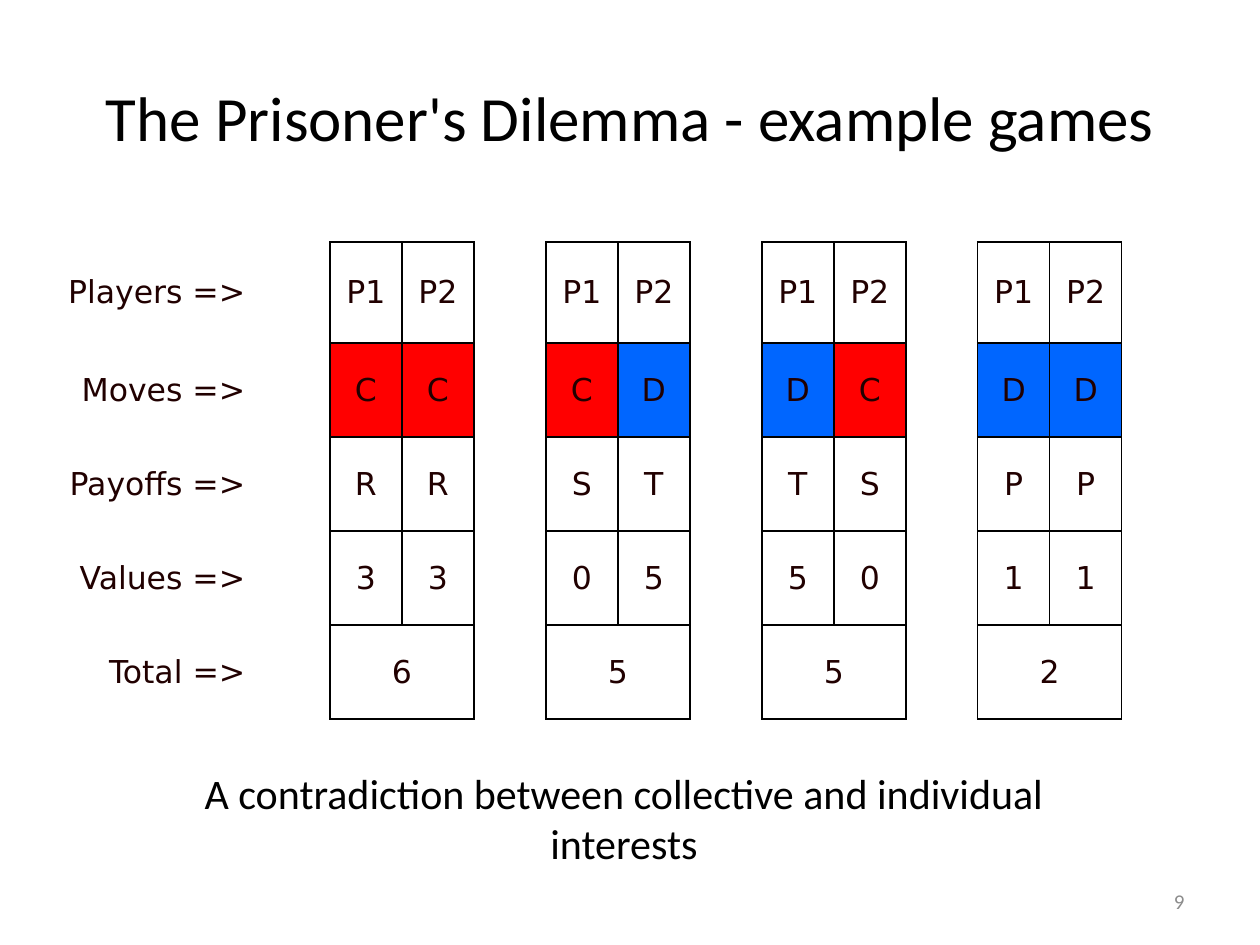
from lxml import etree
from pptx import Presentation
from pptx import util as u
from pptx.dml.color import RGBColor
from pptx.enum import text
from pptx.oxml import ns

SCALE = 914400 / 126
INK, TABLE_INK = "000000", "210000"
FILLS = {"C": "FF0000", "D": "0066FF"}
LABELS = ["Players =>", "Moves =>", "Payoffs =>", "Values =>", "Total =>"]
# Each game: moves, payoffs, values, total
GAMES = [("CC", "RR", "33", "6"), ("CD", "ST", "05", "5"),
         ("DC", "TS", "50", "5"), ("DD", "PP", "11", "2")]
NO_STYLE = "{2D5ABB26-0587-4C30-8999-92F81FD0307C}"
MID, RIGHT = text.PP_ALIGN.CENTER, text.PP_ALIGN.RIGHT


def px(n):
    return u.Emu(round(n * SCALE))


def tint(code):
    return RGBColor.from_string(code)


class Deck:
    font = "Calibri"
    grid_font = "DejaVu Sans"

    def __init__(self):
        self.prs = Presentation()
        self.prs.slide_width, self.prs.slide_height = px(1260), px(945)
        self.slide = self.prs.slides.add_slide(self.prs.slide_layouts[5])

    def put(self, frame, words, size, align, color=INK, font=None):
        para = frame.paragraphs[0]
        para.text = words
        para.alignment = align
        face = para.runs[0].font
        face.name, face.size = font or self.font, u.Pt(size)
        face.color.rgb = tint(color)
        return para

    def title(self, words, x, y, w, h):
        shape = self.slide.shapes.title
        shape.left, shape.top, shape.width, shape.height = map(px, (x, y, w, h))
        frame = shape.text_frame
        frame.margin_left = frame.margin_right = 0
        frame.margin_top = frame.margin_bottom = 0
        frame.vertical_anchor = text.MSO_ANCHOR.MIDDLE
        self.put(frame, words, 36, MID)

    def label(self, words, x, y, w, h, size, align, color=INK,
              anchor=text.MSO_ANCHOR.TOP):
        box = self.slide.shapes.add_textbox(*map(px, (x, y, w, h)))
        frame = box.text_frame
        frame.word_wrap = True
        frame.vertical_anchor = anchor
        return self.put(frame, words, size, align, color)

    def table(self, x, y, cols, rows):
        shape = self.slide.shapes.add_table(
            len(rows), len(cols), *map(px, (x, y, sum(cols), sum(rows))))
        table = shape.table
        table.first_row = table.horz_banding = False
        for style in shape.element.iter(ns.qn("a:tableStyleId")):
            style.text = NO_STYLE
        for col, wide in zip(table.columns, cols):
            col.width = px(wide)
        for row, high in zip(table.rows, rows):
            row.height = px(high)
        for cell in table.iter_cells():
            cell.fill.background()
        return table

    def cell(self, cell, words, align=MID):
        cell.vertical_anchor = text.MSO_ANCHOR.MIDDLE
        para = self.put(cell.text_frame, words, 18, align, TABLE_INK,
                        self.grid_font)
        para.line_spacing, para.space_before = 1.02, u.Pt(6.5)
        if words in FILLS:
            cell.fill.solid()
            cell.fill.fore_color.rgb = tint(FILLS[words])

    def border(self, cell, sides):
        props = cell._tc.get_or_add_tcPr()
        for spot, side in enumerate(sides):
            line = etree.Element(ns.qn("a:ln" + side), w=str(u.Pt(1)))
            fill = etree.SubElement(line, ns.qn("a:solidFill"))
            etree.SubElement(fill, ns.qn("a:srgbClr"), val=INK)
            props.insert(spot, line)


def main():
    deck = Deck()
    deck.title("The Prisoner's Dilemma - example games", 63, 44, 1134, 145)

    # Row labels, then a gap column and two player columns per game
    table = deck.table(32, 242, [226] + [72] * 12, [101] + [94] * 4)
    for row, words in enumerate(LABELS):
        deck.cell(table.cell(row, 0), words, RIGHT)

    for game, (moves, pays, values, total) in enumerate(GAMES):
        gap = 1 + 3 * game
        for row, pair in enumerate([("P1", "P2"), moves, pays, values, total]):
            deck.border(table.cell(row, gap), "LR" if game else "R")
            first, second = (table.cell(row, gap + n) for n in (1, 2))
            if len(pair) == 1:
                first.merge(second)
            for cell, words in zip((first, second), pair):
                deck.cell(cell, words)
            for cell in (first, second):
                deck.border(cell, "LRTB")

    # Conclusion and page number
    para = deck.label("A contradiction between collective and individual interests",
                      135, 761, 978, 113, 24, MID)
    para.space_before = u.Pt(12)
    deck.label("9", 903, 876, 294, 50, 12, RIGHT, "8C8C8C",
               text.MSO_ANCHOR.MIDDLE)
    deck.prs.save("out.pptx")


if __name__ == "__main__":
    main()
